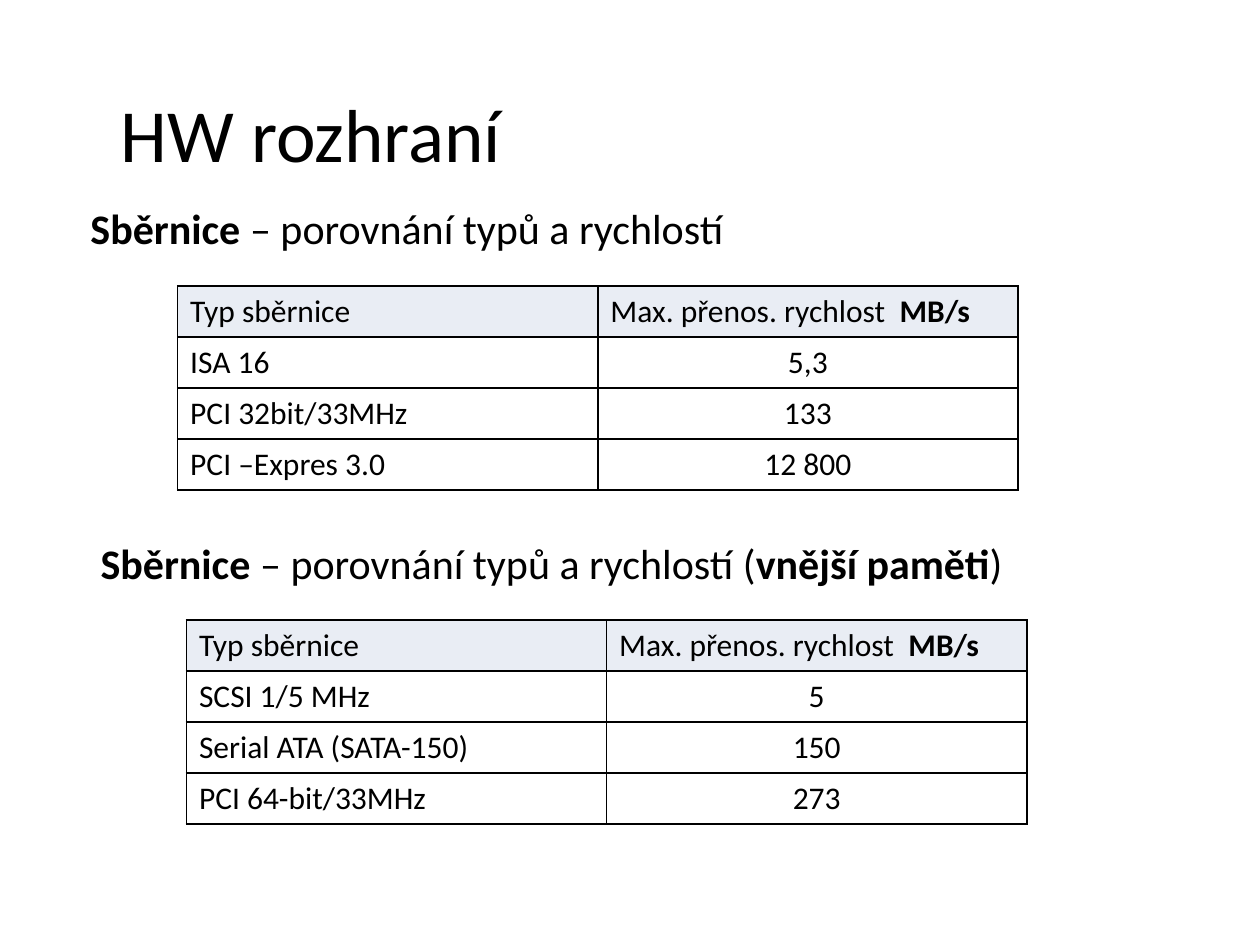
from pptx import Presentation
from pptx.dml.color import RGBColor
from pptx.enum import text
from pptx.oxml import parse_xml
from pptx.oxml.ns import nsdecls
from pptx.util import Inches, Pt

COLORS = {"ink": "000000", "header": "E9EDF4"}
HEADER = ["Typ sběrnice", [("Max. přenos. rychlost  ", False), ("MB/s", True)]]
BUS_ROWS = [("ISA 16", "5,3"), ("PCI 32bit/33MHz", "133"), ("PCI –Expres 3.0", "12 800")]
STORAGE_ROWS = [("SCSI 1/5 MHz", "5"), ("Serial ATA (SATA-150)", "150"), ("PCI 64-bit/33MHz", "273")]


class SlideBuilder:
    """Holds the style and the current slide."""

    font = "Calibri"
    title_size, heading_size, cell_size = 42.9, 24, 18

    def __init__(self, presentation):
        self.slide = presentation.slides.add_slide(presentation.slide_layouts[5])

    def add_runs(self, paragraph, content, size):
        """Fill a paragraph from a string or a list of (words, bold) pairs."""
        pieces = [(content, False)] if isinstance(content, str) else content
        for words, bold in pieces:
            run = paragraph.add_run()
            run.text = words
            run.font.name = self.font
            run.font.size = Pt(size)
            run.font.bold = bold
            run.font.color.rgb = RGBColor.from_string(COLORS["ink"])

    def title(self, content, left, top, width, height):
        title = self.slide.shapes.title
        title.left, title.top = Inches(left), Inches(top)
        title.width, title.height = Inches(width), Inches(height)
        frame = title.text_frame
        frame.auto_size = text.MSO_AUTO_SIZE.NONE
        frame.vertical_anchor = text.MSO_ANCHOR.MIDDLE
        paragraph = frame.paragraphs[0]
        paragraph.alignment = text.PP_ALIGN.LEFT
        self.add_runs(paragraph, content, self.title_size)

    def heading(self, content, left, top, width=8.83, height=0.5):
        box = self.slide.shapes.add_textbox(Inches(left), Inches(top), Inches(width), Inches(height))
        frame = box.text_frame
        frame.word_wrap = True
        frame.auto_size = text.MSO_AUTO_SIZE.SHAPE_TO_FIT_TEXT
        self.add_runs(frame.paragraphs[0], content, self.heading_size)

    def table(self, rows, left, top, width=6.67, height=1.62):
        rows = [HEADER, *rows]
        table = self.slide.shapes.add_table(
            len(rows), len(HEADER), Inches(left), Inches(top), Inches(width), Inches(height)
        ).table
        table.horz_banding = False
        for row_index, row in enumerate(rows):
            for column_index, content in enumerate(row):
                cell = table.cell(row_index, column_index)
                paragraph = cell.text_frame.paragraphs[0]
                self.add_runs(paragraph, content, self.cell_size)
                if row_index == 0:
                    cell.fill.solid()
                    cell.fill.fore_color.rgb = RGBColor.from_string(COLORS["header"])
                else:
                    cell.fill.background()
                    if column_index == 1:
                        paragraph.alignment = text.PP_ALIGN.CENTER
                self.border(cell)

    def border(self, cell, width=1):
        properties = cell._tc.get_or_add_tcPr()
        for position, side in enumerate(("lnL", "lnR", "lnT", "lnB")):
            line = parse_xml(
                f'<a:{side} {nsdecls("a")} w="{Pt(width)}"><a:solidFill>'
                f'<a:srgbClr val="{COLORS["ink"]}"/></a:solidFill></a:{side}>'
            )
            properties.insert(position, line)


def main():
    presentation = Presentation()
    presentation.slide_width, presentation.slide_height = Inches(10), Inches(7.5)
    builder = SlideBuilder(presentation)
    builder.title("HW rozhraní", 0.86, 0.47, 7.72, 1.17)
    builder.heading([("Sběrnice", True), (" – porovnání typů a rychlostí", False)], 0.62, 1.56)
    builder.table(BUS_ROWS, 1.41, 2.27)
    builder.heading(
        [("Sběrnice", True), (" – porovnání typů a rychlostí (", False),
         ("vnější paměti", True), (")", False)], 0.7, 4.22)
    builder.table(STORAGE_ROWS, 1.48, 4.92)
    presentation.save("out.pptx")


if __name__ == "__main__":
    main()
